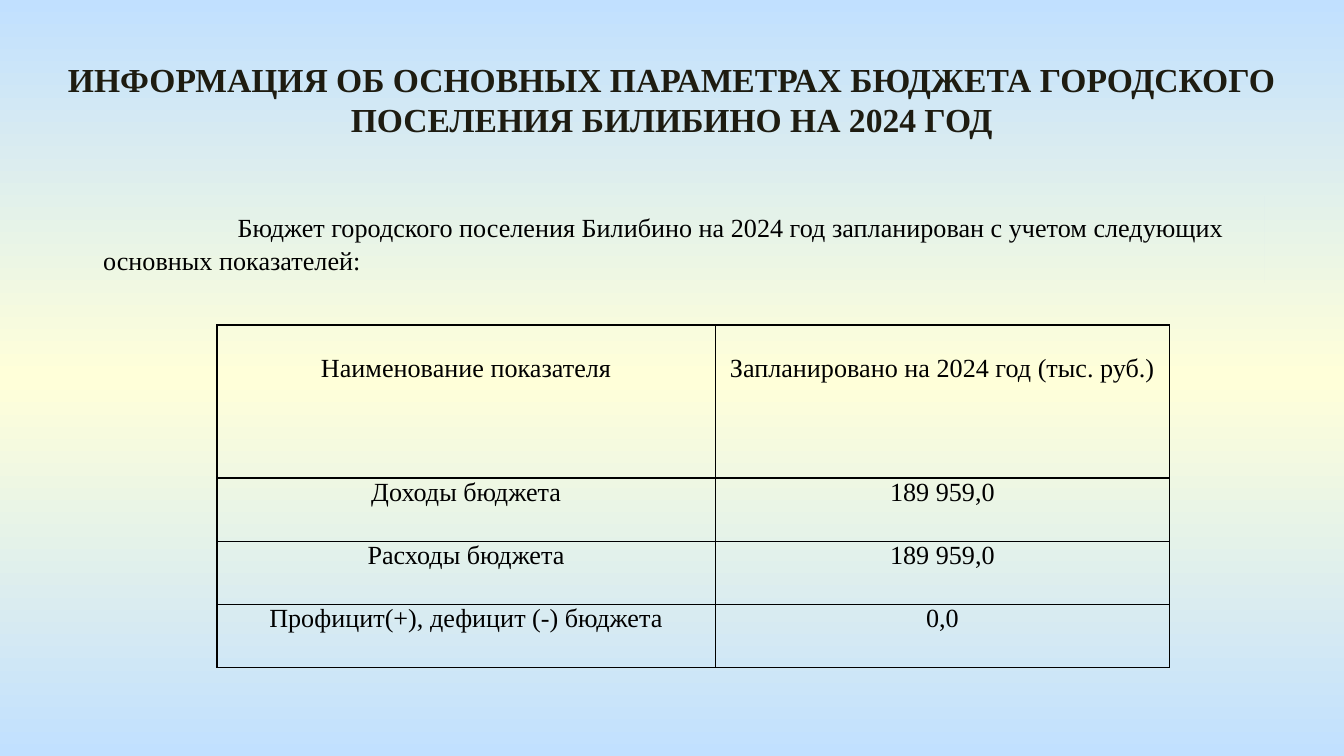
from copy import deepcopy

from lxml import etree
from pptx import Presentation
from pptx.dml.color import RGBColor
from pptx.enum.shapes import MSO_SHAPE
from pptx.enum.text import MSO_ANCHOR, PP_ALIGN
from pptx.oxml.ns import qn
from pptx.util import Cm, Pt

BLACK = RGBColor(0x00, 0x00, 0x00)
TITLE_COLOR = RGBColor(0x1E, 0x1C, 0x11)
SKY = RGBColor(0xC1, 0xE0, 0xFF)
CREAM = RGBColor(0xFF, 0xFF, 0xD9)
FONT = "Times New Roman"

ROWS = [
    ("Наименование показателя", "Запланировано на 2024 год (тыс. руб.)"),
    ("Доходы бюджета", "189 959,0"),
    ("Расходы бюджета", "189 959,0"),
    ("Профицит(+), дефицит (-) бюджета", "0,0"),
]


def add_span(para, text, size=14, color=BLACK, bold=False):
    span = para.add_run()
    span.text = text
    span.font.name = FONT
    span.font.size = Pt(size)
    span.font.color.rgb = color
    span.font.bold = bold


def paint_background(page):
    """Vertical gradient: sky, cream in the middle, sky again."""
    fill = page.background.fill
    fill.gradient()
    fill.gradient_angle = 270
    first, last = fill.gradient_stops
    first.color.rgb, first.position = SKY, 0
    last.color.rgb, last.position = CREAM, 0.5
    stops = next(page.element.iter(qn("a:gsLst")))
    end = deepcopy(stops[0])
    end.set("pos", "100000")
    stops.append(end)


def add_title(page, box):
    frame = page.shapes.add_textbox(*box).text_frame
    frame.word_wrap = True
    para = frame.paragraphs[0]
    para.alignment = PP_ALIGN.CENTER
    add_span(para, "ИНФОРМАЦИЯ ОБ ОСНОВНЫХ ПАРАМЕТРАХ БЮДЖЕТА ГОРОДСКОГО "
                   "ПОСЕЛЕНИЯ БИЛИБИНО НА 2024 ГОД", 18, TITLE_COLOR, True)


def add_intro(page, box):
    shape = page.shapes.add_shape(MSO_SHAPE.RECTANGLE, *box)
    shape.shadow.inherit = False
    shape.line.fill.background()
    # Filled with the slide background, so the theme style goes
    element = shape.element
    element.set("useBgFill", "1")
    element.remove(element.find(qn("p:style")))
    frame = shape.text_frame
    frame.word_wrap = True
    frame.vertical_anchor = MSO_ANCHOR.TOP
    frame.margin_top = Cm(0.25)
    para = frame.paragraphs[0]
    para.alignment = PP_ALIGN.LEFT
    para.line_spacing = 1.05
    # First-line indent
    props = para._p.get_or_add_pPr()
    props.set("marL", "0")
    props.set("indent", str(Cm(2.54)))
    add_span(para, "Бюджет городского поселения Билибино на 2024 год запланирован "
                   "с учетом следующих основных показателей:")


def add_borders(cell):
    props = cell._tc.get_or_add_tcPr()
    for index, side in enumerate(("lnL", "lnR", "lnT", "lnB")):
        line = etree.Element(qn(f"a:{side}"), w=str(Pt(1)))
        solid = etree.SubElement(line, qn("a:solidFill"))
        etree.SubElement(solid, qn("a:srgbClr"), val=str(BLACK))
        props.insert(index, line)


def add_budget_table(page, box):
    left, top, width, height = box
    table = page.shapes.add_table(len(ROWS), 2, left, top, width, height).table
    table.first_row = table.horz_banding = False
    table.columns[0].width = Cm(9.42)
    table.columns[1].width = width - Cm(9.42)
    header_height = Cm(2.9)
    row_height = (height - header_height) // (len(ROWS) - 1)
    for r, texts in enumerate(ROWS):
        table.rows[r].height = row_height if r else header_height
        for c, text in enumerate(texts):
            cell = table.cell(r, c)
            cell.fill.background()
            cell.margin_left = cell.margin_right = Cm(0.18)
            # The header text sits one line lower
            cell.margin_top = Cm(0) if r else Cm(0.56)
            cell.margin_bottom = Cm(0)
            add_borders(cell)
            para = cell.text_frame.paragraphs[0]
            para.alignment = PP_ALIGN.CENTER
            add_span(para, text)


def main():
    deck = Presentation()
    deck.slide_width, deck.slide_height = Cm(25.4), Cm(14.29)
    page = deck.slides.add_slide(deck.slide_layouts[6])
    paint_background(page)
    add_intro(page, (Cm(1.7), Cm(3.71), Cm(22.2), Cm(1.63)))
    add_title(page, (Cm(0.89), Cm(0.99), Cm(23.62), Cm(1.8)))
    add_budget_table(page, (Cm(4.1), Cm(6.14), Cm(18), Cm(6.48)))
    deck.save("out.pptx")


if __name__ == "__main__":
    main()
